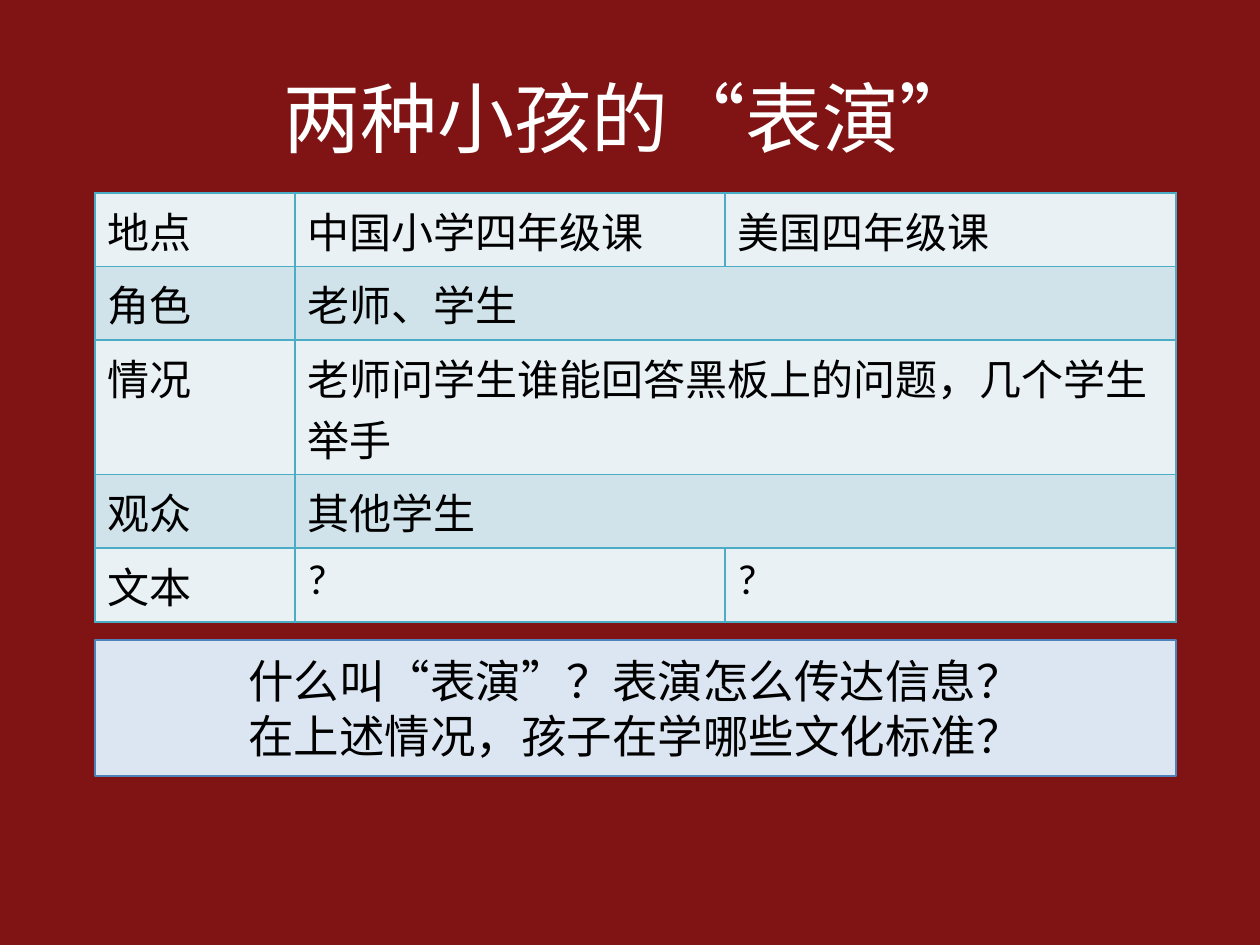
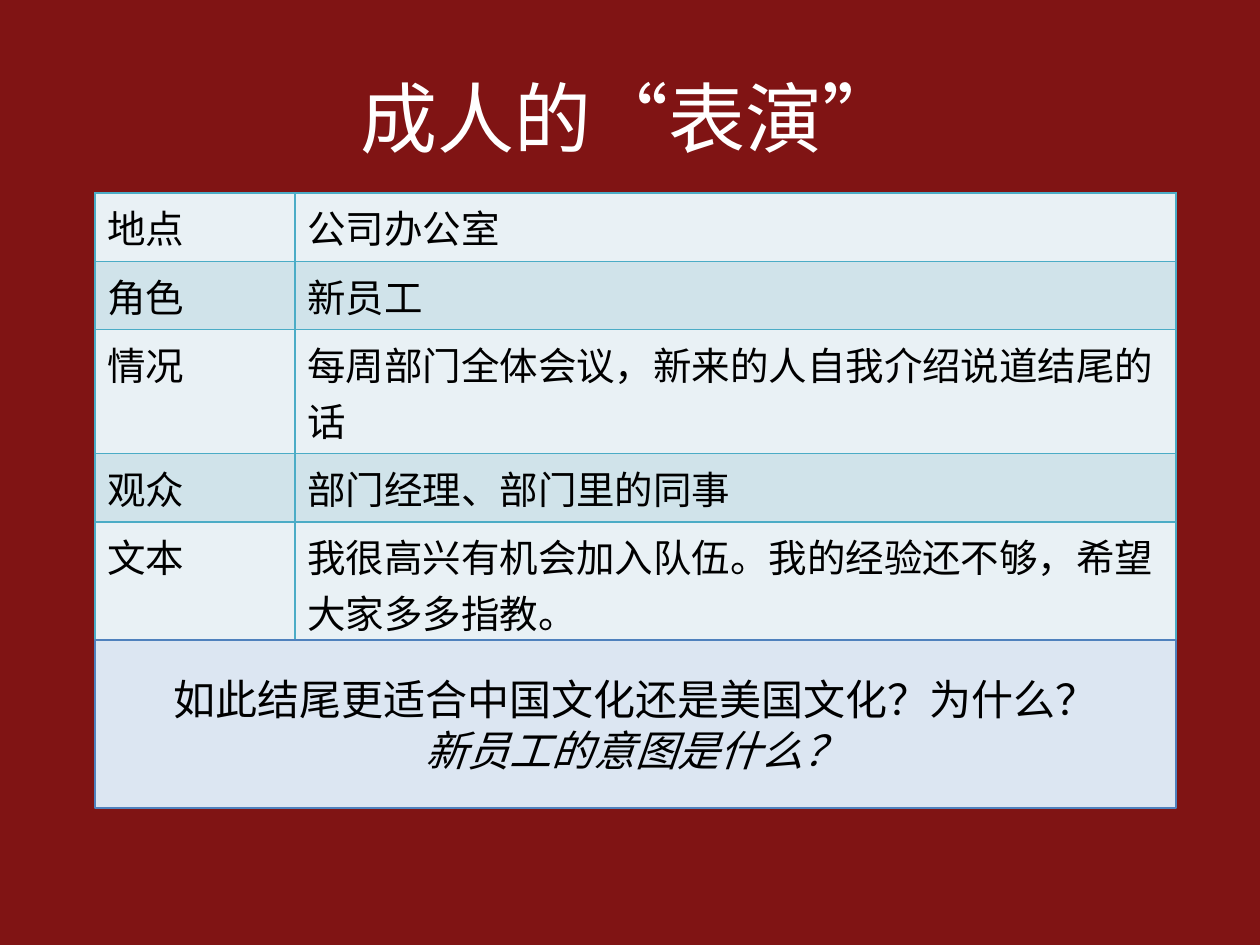
from lxml import etree
from pptx import Presentation
from pptx.dml.color import RGBColor
from pptx.enum.shapes import MSO_SHAPE
from pptx.enum.text import MSO_ANCHOR, PP_ALIGN
from pptx.oxml.ns import qn
from pptx.util import Pt

RECTANGLE = MSO_SHAPE.RECTANGLE
MIDDLE = MSO_ANCHOR.MIDDLE
CENTER = PP_ALIGN.CENTER

EMU_PER_PX = 914400 / 126
FONT = "Calibri"
BACKGROUND = "801414"
TITLE_COLOR = "FFFFFF"
TEXT_COLOR = "000000"
ROW_FILLS = ("E9F1F5", "D0E3EA")
TABLE_BORDER = "4BACC6"
QUESTION_FILL = "DCE6F2"
QUESTION_LINE = "4F81BD"

SLIDE_SIZE = (1260, 945)
TITLE_BOX = (63, 38, 1134, 158)
TABLE_LEFT, TABLE_TOP = 95, 193
CONTENT_WIDTH = 1081
ROW_HEIGHT = 52
QUESTION_TOP = 640

SLIDES = [
    {
        "title": "两种小孩的“表演”",
        "columns": (200, 430, 451),
        "rows": [
            ("地点", "中国小学四年级课", "美国四年级课"),
            ("角色", "老师、学生"),
            ("情况", "老师问学生谁能回答黑板上的问题，几个学生举手"),
            ("观众", "其他学生"),
            ("文本", "?", "?"),
        ],
        "table_size": 24,
        "questions": [
            ("什么叫“表演”？表演怎么传达信息？", False),
            ("在上述情况，孩子在学哪些文化标准？", False),
        ],
        "question_size": 26,
        "question_height": 136,
    },
    {
        "title": "成人的“表演”",
        "columns": (200, 881),
        "rows": [
            ("地点", "公司办公室"),
            ("角色", "新员工"),
            ("情况", "每周部门全体会议，新来的人自我介绍说道结尾的话"),
            ("观众", "部门经理、部门里的同事"),
            ("文本", "我很高兴有机会加入队伍。我的经验还不够，希望大家多多指教。"),
        ],
        "table_size": 22,
        "questions": [
            ("如此结尾更适合中国文化还是美国文化？为什么？", False),
            ("新员工的意图是什么？", True),
        ],
        "question_size": 24,
        "question_height": 168,
    },
]


def px(length):
    return round(length * EMU_PER_PX)


def color(hex_string):
    return RGBColor.from_string(hex_string)


def fill_solid(fill, hex_string):
    fill.solid()
    fill.fore_color.rgb = color(hex_string)


def style_font(paragraph, size, hex_string):
    paragraph.font.name = FONT
    paragraph.font.size = Pt(size)
    paragraph.font.color.rgb = color(hex_string)


def add_title(slide, text, box):
    title = slide.shapes.title
    title.left, title.top, title.width, title.height = map(px, box)
    title.text_frame.vertical_anchor = MIDDLE
    paragraph = title.text_frame.paragraphs[0]
    paragraph.text = text
    paragraph.alignment = CENTER
    style_font(paragraph, 44, TITLE_COLOR)


def add_borders(cell):
    properties = cell._tc.get_or_add_tcPr()
    for side in ("a:lnL", "a:lnR", "a:lnT", "a:lnB"):
        line = etree.SubElement(properties, qn(side), w=str(Pt(1)))
        fill = etree.SubElement(line, qn("a:solidFill"))
        etree.SubElement(fill, qn("a:srgbClr"), val=TABLE_BORDER)


def add_scene_table(slide, rows, columns, size, left, top):
    """Add a banded table; a short row's last cell spans the columns left over."""
    frame = slide.shapes.add_table(
        len(rows), len(columns), px(left), px(top),
        px(sum(columns)), px(ROW_HEIGHT * len(rows)))
    table = frame.table
    table.first_row = False
    for column, width in zip(table.columns, columns):
        column.width = px(width)
    for row_index, texts in enumerate(rows):
        table.rows[row_index].height = px(ROW_HEIGHT)
        for column_index in range(len(columns)):
            cell = table.cell(row_index, column_index)
            add_borders(cell)
            fill_solid(cell.fill, ROW_FILLS[row_index % 2])
            if column_index < len(texts):
                cell.text = texts[column_index]
            style_font(cell.text_frame.paragraphs[0], size, TEXT_COLOR)
        if len(texts) < len(columns):
            last_text = table.cell(row_index, len(texts) - 1)
            last_text.merge(table.cell(row_index, len(columns) - 1))


def add_question_box(slide, questions, size, box):
    shape = slide.shapes.add_shape(RECTANGLE, *map(px, box))
    shape.shadow.inherit = False
    fill_solid(shape.fill, QUESTION_FILL)
    shape.line.color.rgb = color(QUESTION_LINE)
    shape.line.width = Pt(0.75)
    frame = shape.text_frame
    frame.word_wrap = True
    frame.vertical_anchor = MIDDLE
    for index, (text, italic) in enumerate(questions):
        paragraph = frame.add_paragraph() if index else frame.paragraphs[0]
        paragraph.text = text
        paragraph.alignment = CENTER
        style_font(paragraph, size, TEXT_COLOR)
        paragraph.font.italic = italic


def add_performance_slide(presentation, content):
    slide = presentation.slides.add_slide(
        presentation.slide_layouts.get_by_name("Title Only"))
    add_title(slide, content["title"], TITLE_BOX)
    add_scene_table(slide, content["rows"], content["columns"],
                    content["table_size"], TABLE_LEFT, TABLE_TOP)
    add_question_box(
        slide, content["questions"], content["question_size"],
        (TABLE_LEFT, QUESTION_TOP, CONTENT_WIDTH, content["question_height"]))


def main():
    presentation = Presentation()
    presentation.slide_width, presentation.slide_height = map(px, SLIDE_SIZE)
    fill_solid(presentation.slide_master.background.fill, BACKGROUND)
    for content in SLIDES:
        add_performance_slide(presentation, content)
    presentation.save("out.pptx")


if __name__ == "__main__":
    main()
